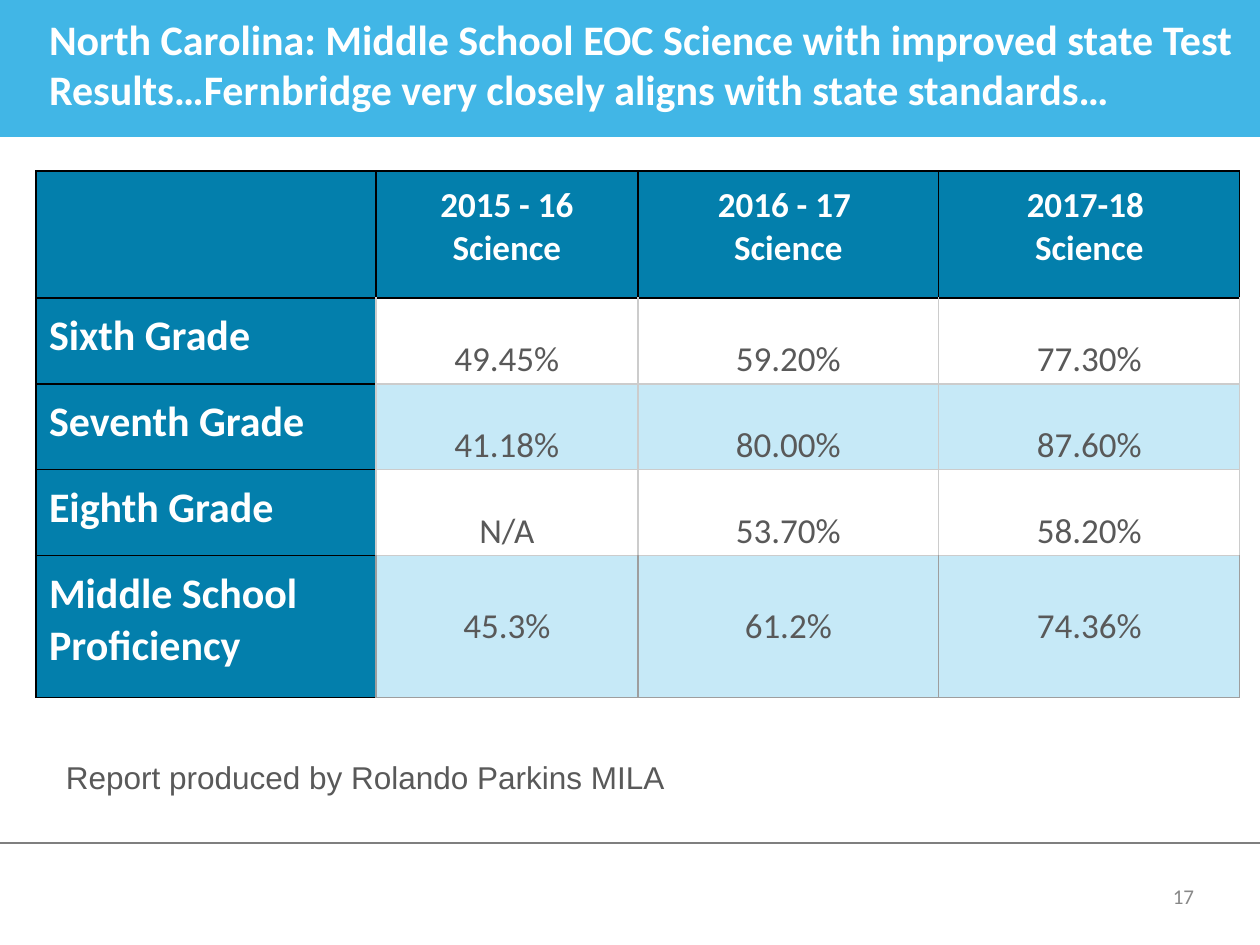
from lxml.etree import SubElement
from pptx import Presentation
from pptx.dml.color import RGBColor as RGB
from pptx.enum.shapes import MSO_CONNECTOR as LINK, MSO_SHAPE as SHAPE
from pptx.enum.text import MSO_ANCHOR as ANC, PP_ALIGN as ALIGN
from pptx.oxml import parse_xml
from pptx.oxml.ns import nsdecls, qn
from pptx.util import Pt

# Content
TITLE = ("North Carolina: Middle School EOC Science with improved state Test "
         "Results…Fernbridge very closely aligns with state standards…")
ROWS = [
    ["", "2015 - 16 Science", "2016 - 17 \nScience", "2017-18 \nScience"],
    ["Sixth Grade", "49.45%", "59.20%", "77.30%"],
    ["Seventh Grade", "41.18%", "80.00%", "87.60%"],
    ["Eighth Grade", "N/A", "53.70%", "58.20%"],
    ["Middle School Proficiency", "45.3%", "61.2%", "74.36%"],
]
CREDIT = "Report produced by Rolando Parkins MILA"
PAGE = "17"

# Look
COLORS = {"band": "41B6E6", "head": "037FAC", "tint": "C6E9F7", "white": "FFFFFF",
          "text": "595959", "page": "888888", "rule": "7F7F7F",
          "black": "000000", "pale": "CCCCCC", "gray": "9E9E9E"}
WIDTHS = [340, 262, 301, 301]
HEIGHTS = [127, 86, 86, 86, 142]
LAST = len(ROWS) - 1
WIDE = (13, 13, 13, 13)
TIGHT = (4, 3, 4, 3)
SIDES = ("left", "top", "right", "bottom")


def px(n):
    return round(n * 914400 / 126)


def color(name):
    return RGB.from_string(COLORS[name])


def write(frame, text, size, tone, bold=False, face="Calibri",
          align=ALIGN.LEFT, space=1.0):
    frame.text = text
    look = {"name": face, "size": Pt(size), "bold": bold}
    for para in frame.paragraphs:
        para.alignment = align
        para.line_spacing = space
        for key, value in look.items():
            setattr(para.font, key, value)
        para.font.color.rgb = color(tone)


def pad(item, inset):
    for side, n in zip(SIDES, inset):
        setattr(item, "margin_" + side, px(n))


def label(slide, box, text, inset=WIDE, anchor=ANC.TOP, **look):
    frame = slide.shapes.add_textbox(*map(px, box)).text_frame
    frame.word_wrap = True
    frame.vertical_anchor = anchor
    pad(frame, inset)
    write(frame, text, **look)


def edges(r, c):
    """Border colours in the order left, right, top, bottom."""
    if r == 0:
        return ["black"] * 4
    side = "gray" if r == LAST else "pale"
    if c == 0:
        return ["black", side, "black", "black"]
    return [side, side, "black" if r == 1 else "pale", side]


def border(cell, names):
    props = cell._tc.get_or_add_tcPr()
    for i, (tag, name) in enumerate(zip(("lnL", "lnR", "lnT", "lnB"), names)):
        props.insert(i, parse_xml(
            f'<a:{tag} {nsdecls("a")} w="9525"><a:solidFill>'
            f'<a:srgbClr val="{COLORS[name]}"/></a:solidFill></a:{tag}>'))


def style(cell, r, c, text):
    head = r == 0 or c == 0
    tight = not head and r < LAST
    fill = "head" if head else "white" if r % 2 else "tint"
    cell.fill.solid()
    cell.fill.fore_color.rgb = color(fill)
    border(cell, edges(r, c))
    pad(cell, TIGHT if tight else WIDE)
    cell.vertical_anchor = ANC.TOP if head else ANC.BOTTOM if tight else ANC.MIDDLE
    write(cell.text_frame, text, size=20 if c else 24,
          tone="white" if head else "text", bold=head,
          align=ALIGN.CENTER if c else ALIGN.LEFT,
          space=1.15 if tight and text != "N/A" else 1.0)


def main():
    deck = Presentation()
    deck.slide_width, deck.slide_height = px(1260), px(945)
    slide = deck.slides.add_slide(deck.slide_layouts[6])

    # Title band and footer rule
    band = slide.shapes.add_shape(SHAPE.RECTANGLE, 0, 0, px(1260), px(137))
    band.shadow.inherit = False
    band.fill.solid()
    band.fill.fore_color.rgb = color("band")
    band.line.fill.background()
    rule = slide.shapes.add_connector(LINK.STRAIGHT, 0, px(843), px(1260), px(843))
    rule.line.color.rgb = color("rule")
    rule.line.width = Pt(1)
    SubElement(rule._element.spPr, qn("a:effectLst"))

    # Page number and title
    label(slide, (922, 871, 294, 50), PAGE, inset=(13, 6, 22, 6), anchor=ANC.MIDDLE,
          size=12, tone="page", align=ALIGN.RIGHT)
    label(slide, (36, 0, 1239, 761), TITLE, size=24, tone="white", bold=True)

    # Results table
    box = (36, 171, sum(WIDTHS), sum(HEIGHTS))
    table = slide.shapes.add_table(len(ROWS), len(WIDTHS), *map(px, box)).table
    table.first_row = table.horz_banding = False
    for col, n in zip(table.columns, WIDTHS):
        col.width = px(n)
    for row, n in zip(table.rows, HEIGHTS):
        row.height = px(n)
    for r, line in enumerate(ROWS):
        for c, text in enumerate(line):
            style(table.cell(r, c), r, c, text)

    # Credit
    label(slide, (53, 745, 804, 50), CREDIT, size=18, tone="text", face="Arial")
    deck.save("out.pptx")


if __name__ == "__main__":
    main()
